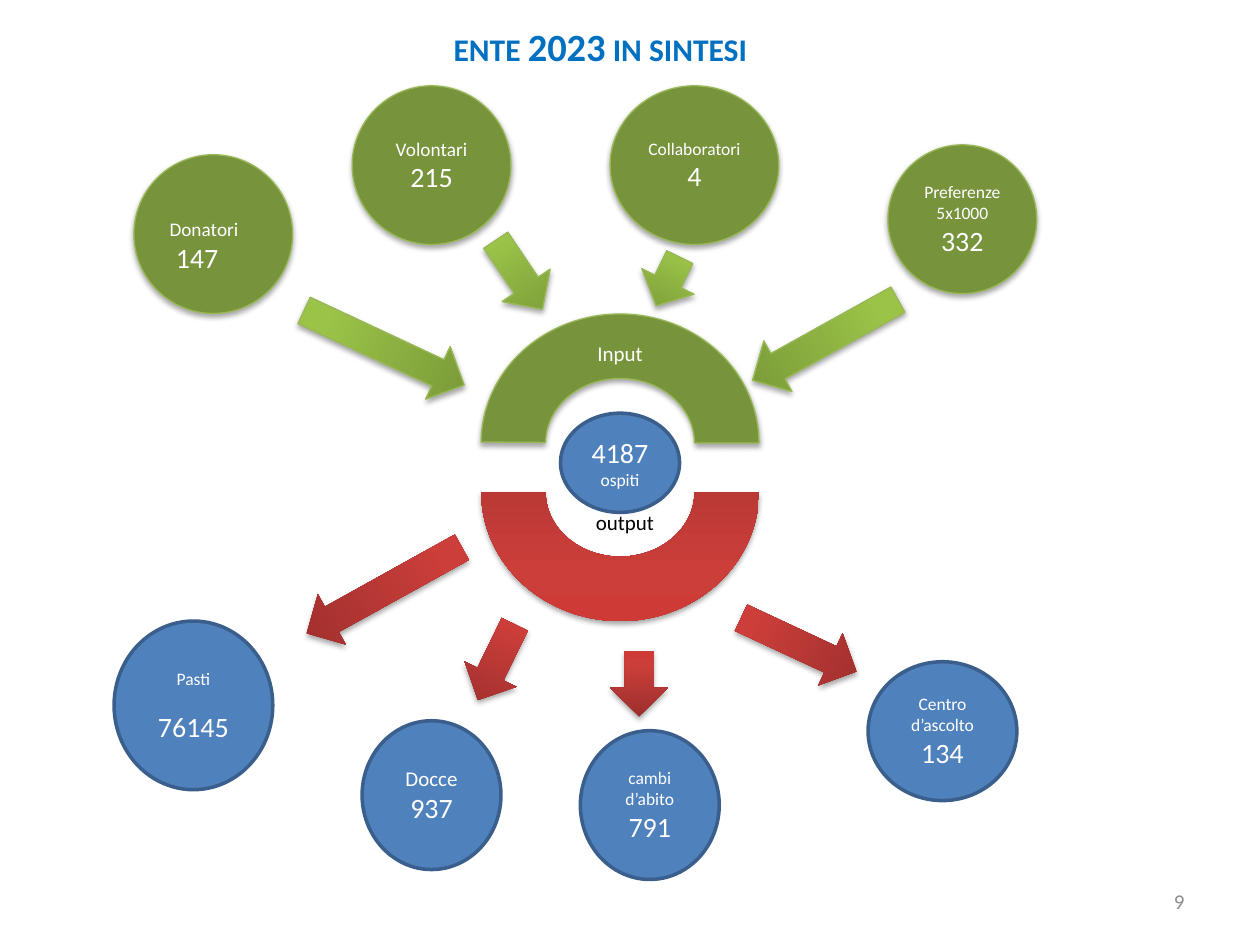
from lxml import etree
from pptx import Presentation
from pptx.dml.color import RGBColor
from pptx.enum.shapes import MSO_SHAPE
from pptx.enum.text import MSO_ANCHOR, MSO_AUTO_SIZE, PP_ALIGN
from pptx.oxml.ns import qn
from pptx.util import Cm, Pt

LEFT, CENTER, RIGHT = PP_ALIGN.LEFT, PP_ALIGN.CENTER, PP_ALIGN.RIGHT
TOP, MIDDLE = MSO_ANCHOR.TOP, MSO_ANCHOR.MIDDLE
ELLIPSE, ARC, ARROW = MSO_SHAPE.OVAL, MSO_SHAPE.BLOCK_ARC, MSO_SHAPE.DOWN_ARROW

FONT = "Calibri"
WHITE, BLACK, TITLE_BLUE, GREY = "FFFFFF", "000000", "0070C0", "8C8C8C"
GREEN, GREEN_LINE = "77933C", "98B955"
BLUE, BLUE_LINE = "4F81BD", "3A5F8C"
GREEN_STOPS = [(0, "779737"), (80, "9BC348"), (100, "9DC746")]
RED_STOPS = [(0, "9C2F2D"), (80, "CB3E3A"), (100, "CE3B37")]
ARROW_WIDTH = 1.17

HEADING = [[("ENTE ", 18), ("2023", 22), (" IN SINTESI", 18)]]
INPUTS = [
    ((2.7, 3.12, 3.2, 3.2), [[("Donatori", 11)], [(" 147", 16)]]),
    ((7.1, 1.73, 3.2, 3.2), [[("Volontari", 11)], [("215", 16)]]),
    ((12.3, 1.73, 3.4, 3.2), [[("Collaboratori", 10)], [("4", 16)]]),
    ((17.9, 2.92, 3, 3), [[("Preferenze 5x1000", 10)], [("332", 16)]]),
]
OUTPUTS = [
    ((2.3, 12.52, 3.2, 3.4), [[("Pasti", 10)], [("76145", 16)]]),
    ((7.3, 14.53, 2.8, 3), [[("Docce", 12)], [("937", 16)]]),
    ((11.7, 14.73, 2.8, 3), [[("cambi d’abito ", 10), ("791", 16)]]),
    ((17.5, 13.34, 3, 2.8), [[("Centro d’ascolto ", 10), ("134", 16)]]),
    ((11.3, 8.33, 2.4, 2), [[("4187 ", 16), ("ospiti", 10)]]),
]
INPUT_ARROWS = [
    (7.16, 5.23, 3.56, 295),
    (9.88, 4.7, 1.68, 326),
    (12.88, 5.13, 1.09, 26),
    (16.05, 5.18, 3.35, 61),
]
OUTPUT_ARROWS = [
    (7.16, 10.11, 3.58, 61),
    (9.42, 12.5, 1.7, 26),
    (12.3, 13.13, 1.32, 0),
    (15.52, 11.71, 2.57, 295),
]


def rgb(code):
    return RGBColor.from_string(code)


def lengths(box):
    return [Cm(value) for value in box]


def write(shape, paragraphs, color, align=CENTER, anchor=MIDDLE, bold=False):
    frame = shape.text_frame
    frame.word_wrap = True
    frame.auto_size = MSO_AUTO_SIZE.NONE
    frame.vertical_anchor = anchor
    for index, runs in enumerate(paragraphs):
        paragraph = frame.add_paragraph() if index else frame.paragraphs[0]
        paragraph.alignment = align
        for words, size in runs:
            run = paragraph.add_run()
            run.text = words
            run.font.name = FONT
            run.font.size = Pt(size)
            run.font.bold = bold
            run.font.color.rgb = rgb(color)
    return frame


def add_shadow(shape):
    effects = shape._element.spPr.find(qn("a:effectLst"))
    shadow = etree.SubElement(effects, qn("a:outerShdw"), blurRad="40000",
                              dist="23000", dir="5400000", rotWithShape="0")
    tint = etree.SubElement(shadow, qn("a:srgbClr"), val=BLACK)
    etree.SubElement(tint, qn("a:alpha"), val="35000")


def fill_gradient(shape, stops):
    shape.fill.gradient()
    shape.fill.gradient_angle = 90
    stop_list = shape._element.spPr.find(qn("a:gradFill")).find(qn("a:gsLst"))
    for old_stop in list(stop_list):
        stop_list.remove(old_stop)
    for percent, code in stops:
        stop = etree.SubElement(stop_list, qn("a:gs"), pos=str(percent * 1000))
        etree.SubElement(stop, qn("a:srgbClr"), val=code)


def draw(slide, kind, box, fill, line=None, weight=0.75, shadow=True, rotation=0):
    shape = slide.shapes.add_shape(kind, *lengths(box))
    shape.rotation = rotation
    shape.shadow.inherit = False
    if isinstance(fill, str):
        shape.fill.solid()
        shape.fill.fore_color.rgb = rgb(fill)
    else:
        fill_gradient(shape, fill)
    if line:
        shape.line.color.rgb = rgb(line)
        shape.line.width = Pt(weight)
    else:
        shape.line.fill.background()
    if shadow:
        add_shadow(shape)
    return shape


def draw_arc(slide, top, start, **style):
    arc = draw(slide, ARC, (9.7, top, 5.6, 5.2), **style)
    for index, value in enumerate((start, 0, 0.25)):
        arc.adjustments[index] = value
    return arc


def draw_arrows(slide, arrows, **style):
    for left, top, length, rotation in arrows:
        draw(slide, ARROW, (left, top, ARROW_WIDTH, length), rotation=rotation, **style)


def main():
    deck = Presentation()
    deck.slide_width, deck.slide_height = Cm(25.4), Cm(19.05)
    slide = deck.slides.add_slide(deck.slide_layouts[5])

    heading = slide.shapes.title
    heading.left, heading.top, heading.width, heading.height = lengths((8.89, 0.33, 7.39, 1.19))
    write(heading, HEADING, TITLE_BLUE, LEFT, TOP, True)

    output_label = slide.shapes.add_textbox(*lengths((11.5, 10.13, 2.2, 0.8)))
    write(output_label, [[("output", 12)]], BLACK)

    input_arc = draw_arc(slide, 6.33, 108.23, fill=GREEN, line=GREEN_LINE)
    write(input_arc, [[("Input", 12)]], WHITE).margin_bottom = Cm(1.14)
    draw_arc(slide, 7.32, 108.07, fill=RED_STOPS, rotation=180)

    output_frames = [
        write(draw(slide, ELLIPSE, box, BLUE, BLUE_LINE, 2, False), paragraphs, WHITE)
        for box, paragraphs in OUTPUTS
    ]
    output_frames[0].paragraphs[1].space_before = Pt(12)

    draw_arrows(slide, INPUT_ARROWS, fill=GREEN_STOPS, line=GREEN_LINE)
    draw_arrows(slide, OUTPUT_ARROWS, fill=RED_STOPS)

    for index, (box, paragraphs) in enumerate(INPUTS):
        circle = draw(slide, ELLIPSE, box, GREEN, GREEN_LINE)
        frame = write(circle, paragraphs, WHITE, CENTER if index else LEFT)
        if index == 0:
            frame.margin_top = Cm(0.6)

    page_number = slide.shapes.add_textbox(*lengths((18.21, 17.65, 5.92, 1.02)))
    write(page_number, [[("9", 12)]], GREY, RIGHT)

    deck.save("out.pptx")


if __name__ == "__main__":
    main()
